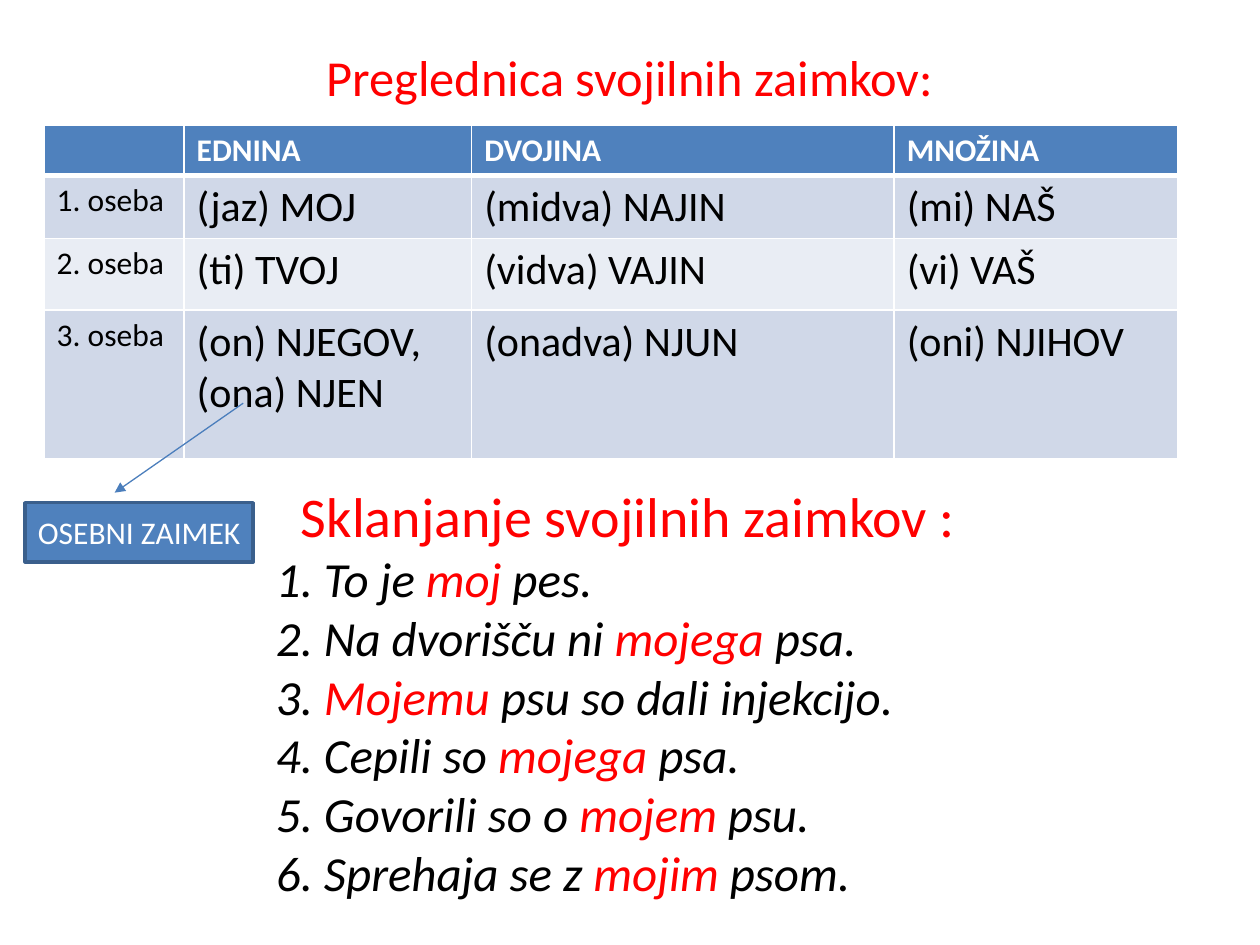
from lxml import etree
from pptx import Presentation
from pptx.dml.color import RGBColor
from pptx.enum import shapes, text
from pptx.oxml import ns
from pptx.util import Inches, Pt

RED, BLACK, WHITE, BLUE = "FF0000", "000000", "FFFFFF", "4F81BD"
BANDS = ("D0D8E8", "E9EDF4")
COLUMNS = (1.11, 2.28, 3.35, 2.25)
ROWS = (0.4, 0.5, 0.57, 1.18)
PRONOUNS = (
    ("", "EDNINA", "DVOJINA", "MNOŽINA"),
    ("1. oseba", "(jaz) MOJ", "(midva) NAJIN", "(mi) NAŠ"),
    ("2. oseba", "(ti) TVOJ", "(vidva) VAJIN", "(vi) VAŠ"),
    ("3. oseba", "(on) NJEGOV,\n(ona) NJEN", "(onadva) NJUN", "(oni) NJIHOV"),
)
SENTENCES = (
    ("1. To je ", "moj", " pes."),
    ("2. Na dvorišču ni ", "mojega", " psa."),
    ("3. ", "Mojemu", " psu so dali injekcijo."),
    ("4. Cepili so ", "mojega", " psa."),
    ("5. Govorili so o ", "mojem", " psu."),
    ("6. Sprehaja se z ", "mojim", " psom."),
)


def rgb(value):
    """Turn a hex string into a colour."""
    return RGBColor.from_string(value)


def style(run, size, color, bold=False, italic=False):
    """Format one run."""
    font = run.font
    font.name, font.size, font.bold, font.italic = "Calibri", Pt(size), bold, italic
    font.color.rgb = rgb(color)


def style_frame(frame, size, color, bold=False):
    """Format every run of a text frame alike."""
    for paragraph in frame.paragraphs:
        for run in paragraph.runs:
            style(run, size, color, bold)


def add_centred(frame, words, size, color):
    """Fill a frame with one centred line."""
    frame.text = words
    frame.word_wrap = True
    frame.vertical_anchor = text.MSO_ANCHOR.MIDDLE
    frame.paragraphs[0].alignment = text.PP_ALIGN.CENTER
    style_frame(frame, size, color)


def add_title(slide, left, top, width, height):
    """Place the slide title."""
    title = slide.shapes.add_textbox(left, top, width, height)
    add_centred(title.text_frame, "Preglednica svojilnih zaimkov:", 28.8, RED)


def set_borders(cell, bottom):
    """Draw white cell borders, with the given bottom width in points."""
    properties = cell._tc.get_or_add_tcPr()
    widths = (("lnL", 1), ("lnR", 1), ("lnT", 1), ("lnB", bottom))
    for position, (side, points) in enumerate(widths):
        line = etree.Element(ns.qn(f"a:{side}"), w=str(Pt(points)))
        fill = etree.SubElement(line, ns.qn("a:solidFill"))
        etree.SubElement(fill, ns.qn("a:srgbClr"), val=WHITE)
        properties.insert(position, line)


def add_pronoun_table(slide, left, top, width, height):
    """Place the table of possessive pronouns."""
    table = slide.shapes.add_table(len(ROWS), len(COLUMNS), left, top, width, height).table
    for column, share in zip(table.columns, COLUMNS):
        column.width = int(width * share / sum(COLUMNS))
    for row, share in zip(table.rows, ROWS):
        row.height = int(height * share / sum(ROWS))
    for r, words in enumerate(PRONOUNS):
        header = r == 0
        for c, word in enumerate(words):
            cell = table.cell(r, c)
            cell.text_frame.text = word
            size = 18 if header or c == 0 else 24
            style_frame(cell.text_frame, size, WHITE if header else BLACK, header)
            cell.fill.solid()
            cell.fill.fore_color.rgb = rgb(BLUE if header else BANDS[(r - 1) % 2])
            set_borders(cell, 3 if header or r == 0 else 1)


def indent(paragraph, distance):
    """Set the left margin of a paragraph."""
    paragraph._p.get_or_add_pPr().set("marL", str(distance))


def add_declension(slide, left, top, width, height):
    """Place the declension heading and its example sentences."""
    frame = slide.shapes.add_textbox(left, top, width, height).text_frame
    frame.word_wrap = True
    frame.text = "Sklanjanje svojilnih zaimkov :"
    style_frame(frame, 32, RED)
    indent(frame.paragraphs[0], Inches(1.7))
    for sentence in SENTENCES:
        paragraph = frame.add_paragraph()
        indent(paragraph, Inches(1.5))
        for part, color in zip(sentence, (BLACK, RED, BLACK)):
            run = paragraph.add_run()
            run.text = part
            style(run, 28, color, italic=True)


def add_label(slide, left, top, width, height):
    """Place the personal pronoun label."""
    label = slide.shapes.add_shape(shapes.MSO_SHAPE.RECTANGLE, left, top, width, height)
    label.shadow.inherit = False
    label.fill.solid()
    label.fill.fore_color.rgb = rgb(BLUE)
    label.line.color.rgb = rgb("3A5F8C")
    label.line.width = Pt(2)
    add_centred(label.text_frame, "OSEBNI ZAIMEK", 18, WHITE)


def add_arrow(slide, start_x, start_y, end_x, end_y):
    """Point from the pronoun in the table to its label."""
    arrow = slide.shapes.add_connector(
        shapes.MSO_CONNECTOR.STRAIGHT, start_x, start_y, end_x, end_y)
    arrow.line.color.rgb = rgb("4B7EBC")
    arrow.line.width = Pt(0.75)
    etree.SubElement(arrow.line._get_or_add_ln(), ns.qn("a:tailEnd"), type="triangle")
    etree.SubElement(arrow._element.spPr, ns.qn("a:effectLst"))


def main():
    """Build and save the slide."""
    deck = Presentation()
    deck.slide_width, deck.slide_height = Inches(10), Inches(7.5)
    slide = deck.slides.add_slide(deck.slide_layouts[6])
    add_title(slide, Inches(0.5), Inches(0.3), Inches(9), Inches(0.61))
    add_pronoun_table(slide, Inches(0.35), Inches(0.99), Inches(9), Inches(2.65))
    add_declension(slide, Inches(0.59), Inches(3.77), Inches(8.51), Inches(3.53))
    add_arrow(slide, Inches(1.93), Inches(3.2), Inches(0.91), Inches(3.91))
    add_label(slide, Inches(0.2), Inches(3.99), Inches(1.81), Inches(0.47))
    deck.save("out.pptx")


if __name__ == "__main__":
    main()
